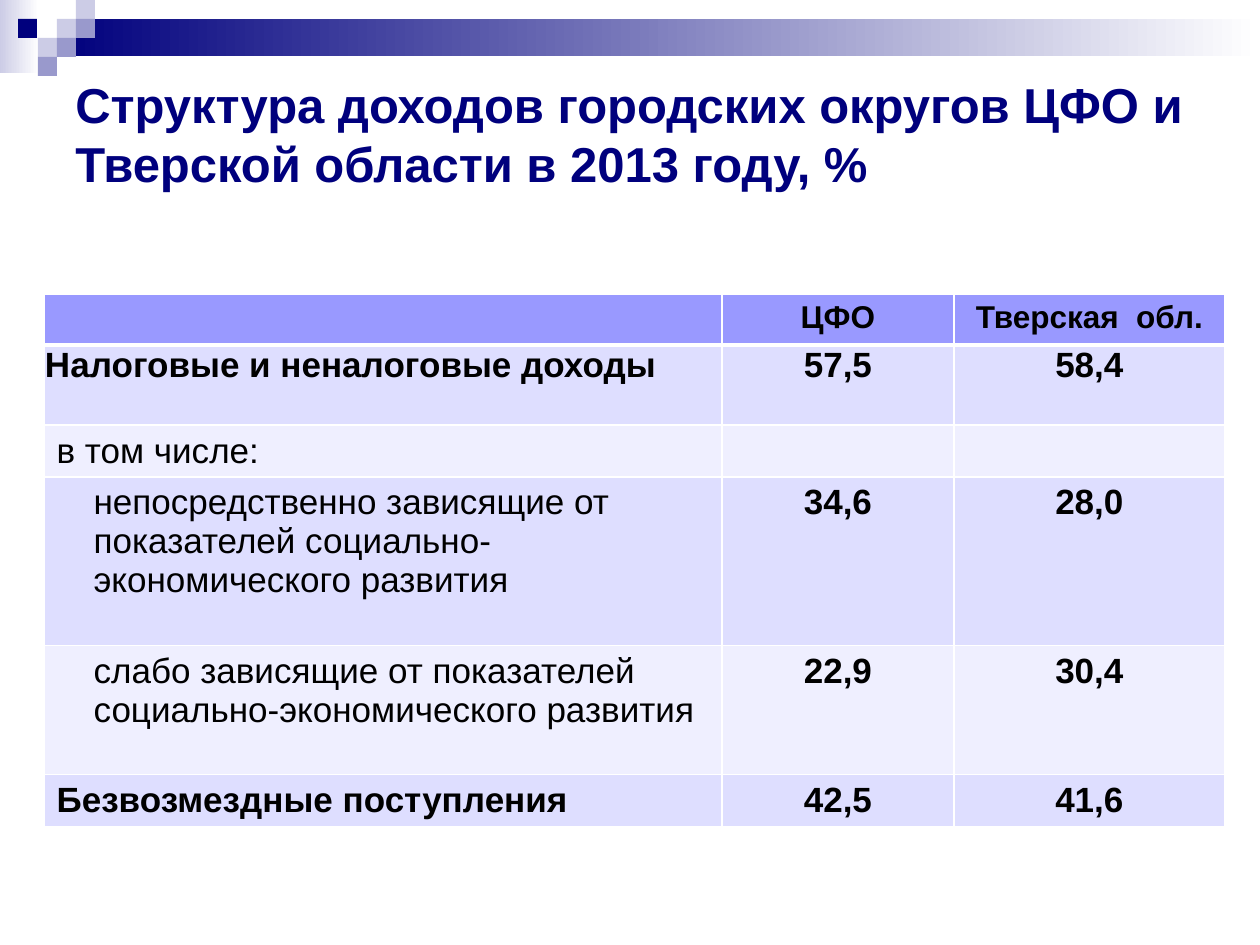
from lxml import etree
from pptx import Presentation
from pptx.dml.color import RGBColor
from pptx.enum import shapes, text
from pptx.oxml.ns import qn
from pptx.util import Pt

PX = 914400 // 126
TITLE = "Структура доходов городских округов ЦФО и Тверской области в 2013 году, %"
BARS = [(0, 0, 39, 73, "CCCCE6"), (57, 19, 1203, 37, "00007D")]
TILES = [
    (57, 19, "CCCCE6"), (76, 0, "CCCCE6"), (76, 19, "9999CC"),
    (38, 38, "CCCCE6"), (18, 19, "00007D"), (57, 38, "9999CC"),
    (38, 57, "9999CC"),
]
TILE = 19
COLS = [678, 232, 271]
ROWS = [
    (51, 18, True, 0, ("", "ЦФО", "Тверская  обл.")),
    (80, 20, True, 0, ("Налоговые и неналоговые доходы", "57,5", "58,4")),
    (51, 20, False, 0, ("в том числе:", "", "")),
    (169, 20, False, 37, ("непосредственно зависящие от показателей "
                          "социально-экономического развития", "34,6", "28,0")),
    (129, 20, False, 37, ("слабо зависящие от показателей "
                          "социально-экономического развития", "22,9", "30,4")),
    (52, 20, True, 0, ("Безвозмездные поступления", "42,5", "41,6")),
]
HEAD, ODD, EVEN = "9999FF", "DEDEFF", "EFEFFF"


def px(*vals):
    return [v * PX for v in vals]


def color(code):
    return RGBColor.from_string(code)


def style(para, size, tint, bold):
    for run in para.runs:
        font = run.font
        font.name, font.size, font.bold = "Arial", Pt(size), bold
        font.color.rgb = color(tint)


def box(x, y, w, h, tint, fade=False):
    rect = slide.shapes.add_shape(shapes.MSO_SHAPE.RECTANGLE, *px(x, y, w, h))
    rect.shadow.inherit = False
    rect.line.fill.background()
    if fade:
        rect.fill.gradient()
        rect.fill.gradient_angle = 0
        for stop, code, pos in zip(rect.fill.gradient_stops, (tint, "FFFFFF"), (0, 1)):
            stop.color.rgb = color(code)
            stop.position = pos
    else:
        rect.fill.solid()
        rect.fill.fore_color.rgb = color(tint)


def border(cell, row):
    props = cell._tc.get_or_add_tcPr()
    thick = {"T": row == 1, "B": row == 0}
    for i, side in enumerate("LRTB"):
        line = etree.Element(qn(f"a:ln{side}"), w=str(Pt(3 if thick.get(side) else 1)))
        fill = etree.SubElement(line, qn("a:solidFill"))
        etree.SubElement(fill, qn("a:srgbClr"), val="FFFFFF")
        props.insert(i, line)


prs = Presentation()
prs.slide_width, prs.slide_height = px(1260, 945)
slide = prs.slides.add_slide(prs.slide_layouts[6])

for bar in BARS:
    box(*bar, fade=True)
for x, y, tint in TILES:
    box(x, y, TILE, TILE, tint)

table = slide.shapes.add_table(
    len(ROWS), len(COLS), *px(44, 294, sum(COLS), sum(r[0] for r in ROWS))).table
for col, width in zip(table.columns, COLS):
    col.width = width * PX
for r, (high, size, bold, indent, words) in enumerate(ROWS):
    table.rows[r].height = high * PX
    for c, word in enumerate(words):
        cell = table.cell(r, c)
        cell.fill.solid()
        cell.fill.fore_color.rgb = color(HEAD if r == 0 else ODD if r % 2 else EVEN)
        border(cell, r)
        if r == 1:
            cell.margin_left = cell.margin_right = cell.margin_top = PX
            cell.margin_bottom = 0
        cell.text_frame.text = word
        para = cell.text_frame.paragraphs[0]
        if c:
            para.alignment = text.PP_ALIGN.CENTER
        elif indent:
            para._p.get_or_add_pPr().set("marL", str(indent * PX))
        style(para, size, "000000", bold or c > 0)

title = slide.shapes.add_textbox(*px(63, 63, 1134, 141)).text_frame
title.word_wrap = True
title.vertical_anchor = text.MSO_ANCHOR.MIDDLE
title.text = TITLE
style(title.paragraphs[0], 28, "00007D", True)

prs.save("out.pptx")
